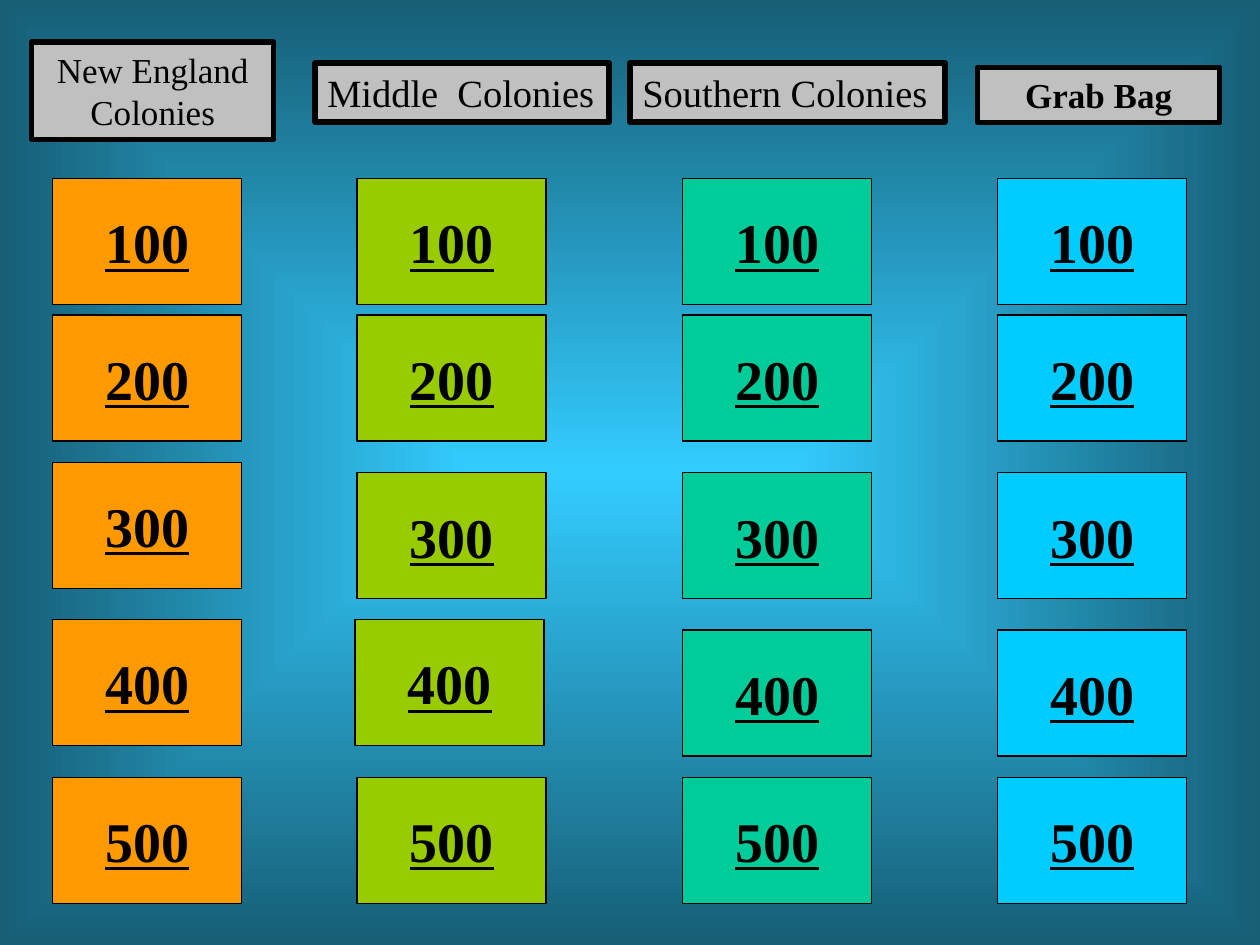
"""Build a quiz board with four colony categories and point-value buttons."""
from lxml import etree
from pptx import Presentation
from pptx import util as u
from pptx.dml.color import RGBColor
from pptx.enum import shapes, text
from pptx.oxml.ns import qn

FONT = "Times New Roman"
COLORS = {
    "center": "33CCFF", "edge": "175E76", "ink": "000000", "header": "C0C0C0",
    "orange": "FF9900", "lime": "99CC00", "green": "00CC99", "sky": "00CCFF",
}
LEFT, CENTER = text.PP_ALIGN.LEFT, text.PP_ALIGN.CENTER
HEADERS = [
    ("New England Colonies", (0.64, 0.85, 4.88, 1.96), 20, False, CENTER),
    ("Middle  Colonies", (6.35, 1.27, 5.93, 1.19), 22, False, LEFT),
    ("Southern Colonies", (12.7, 1.27, 6.35, 1.19), 22, False, LEFT),
    ("Grab Bag", (19.71, 1.36, 4.88, 1.11), 20, True, CENTER),
]
COLUMNS = [("orange", 1.06), ("lime", 7.2), ("green", 13.76), ("sky", 20.11)]
ROWS = [("100", 3.6), ("200", 6.35), ("300", 9.53), ("400", 12.7), ("500", 15.67)]
SHIFTS = {
    ("orange", "300"): (0, -0.21),
    ("orange", "400"): (0, -0.21),
    ("lime", "400"): (-0.04, -0.21),
}
BUTTON_SIZE = (3.81, 2.54)


def color(name):
    return RGBColor.from_string(COLORS[name])


def paint_background(slide):
    fill = slide.background.fill
    fill.gradient()
    for stop, name, position in zip(fill.gradient_stops, ("center", "edge"), (0, 1)):
        stop.color.rgb = color(name)
        stop.position = position
    gradient = slide.element.find(".//" + qn("a:gradFill"))
    gradient.remove(gradient.find(qn("a:lin")))
    shade = etree.SubElement(gradient, qn("a:path"), path="shape")
    etree.SubElement(shade, qn("a:fillToRect"), l="50000", t="50000", r="50000", b="50000")


def add_box(slide, kind, box, label, fill, line_width, size, bold, align):
    shape = slide.shapes.add_shape(kind, *map(u.Cm, box))
    shape.shadow.inherit = False
    shape.fill.solid()
    shape.fill.fore_color.rgb = color(fill)
    shape.line.color.rgb = color("ink")
    shape.line.width = u.Pt(line_width)
    shape.text_frame.text = label
    paragraph = shape.text_frame.paragraphs[0]
    paragraph.alignment = align
    font = paragraph.font
    font.name, font.size, font.bold = FONT, u.Pt(size), bold
    font.color.rgb = color("ink")
    return shape


def add_header(slide, label, box, size, bold, align):
    shape = add_box(slide, shapes.MSO_SHAPE.RECTANGLE, box, label, "header", 3, size, bold, align)
    frame = shape.text_frame
    frame.word_wrap = True
    frame.vertical_anchor = text.MSO_ANCHOR.TOP
    frame.auto_size = text.MSO_AUTO_SIZE.SHAPE_TO_FIT_TEXT


def add_button(slide, points, fill, left, top):
    kind = shapes.MSO_SHAPE.ACTION_BUTTON_CUSTOM
    shape = add_box(slide, kind, (left, top, *BUTTON_SIZE), points, fill, 0.75, 32, True, CENTER)
    shape.text_frame.word_wrap = False
    shape.text_frame.vertical_anchor = text.MSO_ANCHOR.MIDDLE
    shape.text_frame.paragraphs[0].font.underline = True


def main():
    presentation = Presentation()
    presentation.slide_width, presentation.slide_height = u.Cm(25.4), u.Cm(19.05)
    slide = presentation.slides.add_slide(presentation.slide_layouts[6])
    paint_background(slide)
    for header in HEADERS:
        add_header(slide, *header)
    for fill, left in COLUMNS:
        for points, top in ROWS:
            shift_x, shift_y = SHIFTS.get((fill, points), (0, 0))
            add_button(slide, points, fill, left + shift_x, top + shift_y)
    presentation.save("out.pptx")


if __name__ == "__main__":
    main()
